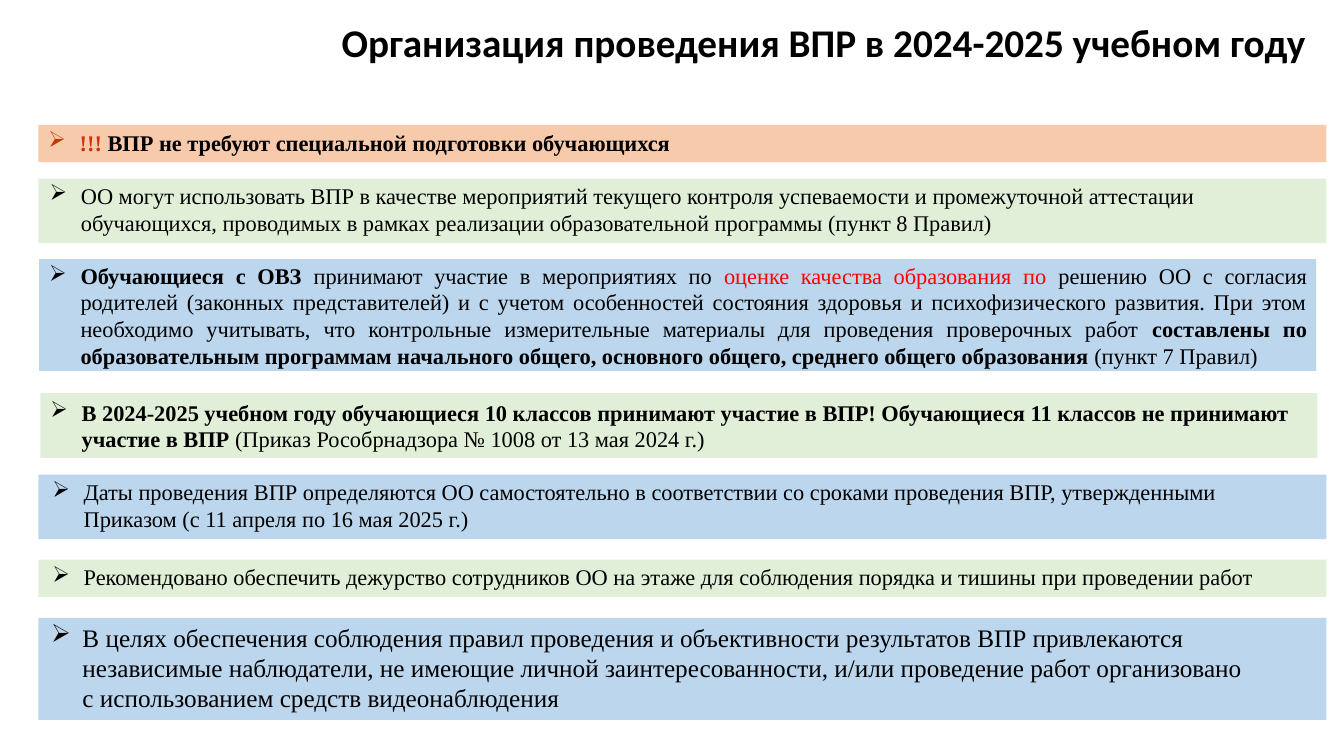
from dataclasses import dataclass

from lxml import etree
from pptx import Presentation
from pptx import util as u
from pptx.dml.color import RGBColor
from pptx.enum import shapes, text
from pptx.oxml.ns import qn


@dataclass(frozen=True)
class Theme:
    head: str = "Calibri"
    body: str = "Times New Roman"
    title: int = 28
    size: int = 16
    large: int = 18
    ink: str = "000000"
    rust: str = "CC3300"
    red: str = "FF0000"
    peach: str = "F8CAAC"
    green: str = "E1EFD9"
    blue: str = "BCD6ED"


T = Theme()
TITLE = "Организация проведения ВПР в 2024-2025 учебном году"

# A line is a list of (text, bold, colour) runs.
BARS = [
    dict(top=3.15, high=0.94, fill=T.peach, mark=T.rust, lines=[[
        ("!!! ", True, T.rust),
        ("ВПР не требуют специальной подготовки обучающихся", True, T.ink)]]),
    dict(top=4.5, high=1.63, fill=T.green, indent=1.07, gap=u.Pt(19), lines=[
        [("ОО могут использовать ВПР в качестве мероприятий текущего контроля "
          "успеваемости и промежуточной аттестации", False, T.ink)],
        [("обучающихся, проводимых в рамках реализации образовательной "
          "программы (пункт 8 Правил)", False, T.ink)]]),
    dict(top=6.53, high=2.82, wide=32.18, fill=T.blue, gap=0.99, right=0.23,
         align=text.PP_ALIGN.JUSTIFY, left=0.99, lines=[[
             ("Обучающиеся с ОВЗ ", True, T.ink),
             ("принимают участие в мероприятиях по ", False, T.ink),
             ("оценке качества образования по ", False, T.red),
             ("решению ОО с согласия родителей (законных представителей) и с "
              "учетом особенностей состояния здоровья и психофизического "
              "развития. При этом необходимо учитывать, что контрольные "
              "измерительные материалы для проведения проверочных работ ",
              False, T.ink),
             ("составлены по образовательным программам начального общего, "
              "основного общего, среднего общего образования ", True, T.ink),
             ("(пункт 7 Правил)", False, T.ink)]]),
    dict(top=9.91, high=1.63, left=1.02, wide=32.18, fill=T.green,
         gap=u.Pt(18.8), inset=0.15, lines=[[
             ("В 2024-2025 учебном году обучающиеся 10 классов принимают "
              "участие в ВПР! Обучающиеся 11 классов не принимают участие "
              "в ВПР ", True, T.ink),
             ("(Приказ Рособрнадзора № 1008 от 13 мая 2024 г.)",
              False, T.ink)]]),
    dict(top=11.96, high=1.63, fill=T.blue, indent=1.14, gap=u.Pt(19.1), lines=[
        [("Даты проведения ВПР определяются ОО самостоятельно в соответствии "
          "со сроками проведения ВПР, утвержденными", False, T.ink)],
        [("Приказом (с 11 апреля по 16 мая 2025 г.)", False, T.ink)]]),
    dict(top=14.1, high=0.94, fill=T.green, indent=1.14, lines=[[
        ("Рекомендовано обеспечить дежурство сотрудников ОО на этаже для "
         "соблюдения порядка и тишины при проведении работ", False, T.ink)]]),
    dict(top=15.57, high=2.57, fill=T.blue, indent=1.11, right=1.9,
         size=T.large, lines=[
             [("В целях обеспечения соблюдения правил проведения и "
               "объективности результатов ВПР привлекаются", False, T.ink)],
             [("независимые наблюдатели, не имеющие личной "
               "заинтересованности, и/или проведение работ организовано "
               "с использованием средств видеонаблюдения", False, T.ink)]]),
]


def rgb(code):
    return RGBColor.from_string(code)


def set_frame(frame, inset):
    frame.margin_left = frame.margin_right = frame.margin_bottom = 0
    frame.margin_top = u.Cm(inset)
    frame.word_wrap = True
    frame.auto_size = text.MSO_AUTO_SIZE.NONE
    frame.vertical_anchor = text.MSO_ANCHOR.TOP


def set_list(para, indent, right, mark):
    """Indent a paragraph; with a mark colour, hang an arrow bullet."""
    props = para._p.get_or_add_pPr()
    props.set("marL", str(u.Cm(indent)))
    props.set("marR", str(u.Cm(right)))
    props.set("indent", str(-u.Cm(0.79) if mark else 0))
    if mark:
        tint = etree.SubElement(props, qn("a:buClr"))
        etree.SubElement(tint, qn("a:srgbClr"), val=mark)
        etree.SubElement(props, qn("a:buChar"), char="➢")


def add_title(slide):
    title = slide.shapes.title
    title.left, title.top = u.Cm(8.61), u.Cm(-0.1)
    title.width, title.height = u.Cm(24.59), u.Cm(2.51)
    set_frame(title.text_frame, 0.55)
    title.text_frame.text = TITLE
    para = title.text_frame.paragraphs[0]
    para.alignment = text.PP_ALIGN.LEFT
    para.line_spacing = 1.0
    para.font.name, para.font.size = T.head, u.Pt(T.title)
    para.font.bold = True
    para.font.color.rgb = rgb(T.ink)


def add_bar(slide, top, high, fill, lines, left=0.97, wide=32.46, indent=1.04,
            right=0, inset=0.1, gap=1.0, size=T.size, mark=T.ink,
            align=text.PP_ALIGN.LEFT):
    bar = slide.shapes.add_shape(
        shapes.MSO_SHAPE.RECTANGLE,
        u.Cm(left), u.Cm(top), u.Cm(wide), u.Cm(high))
    bar.shadow.inherit = False
    bar.fill.solid()
    bar.fill.fore_color.rgb = rgb(fill)
    bar.line.fill.background()
    frame = bar.text_frame
    set_frame(frame, inset)
    for n, line in enumerate(lines):
        para = frame.add_paragraph() if n else frame.paragraphs[0]
        set_list(para, indent, right, None if n else mark)
        para.alignment, para.line_spacing = align, gap
        para.font.name, para.font.size = T.body, u.Pt(size)
        for words, bold, ink in line:
            run = para.add_run()
            run.text = words
            run.font.bold = bold
            run.font.color.rgb = rgb(ink)


def main():
    deck = Presentation()
    deck.slide_width, deck.slide_height = u.Cm(33.87), u.Cm(19.05)
    slide = deck.slides.add_slide(deck.slide_layouts[5])
    add_title(slide)
    for bar in BARS:
        add_bar(slide, **bar)
    deck.save("out.pptx")


if __name__ == "__main__":
    main()
